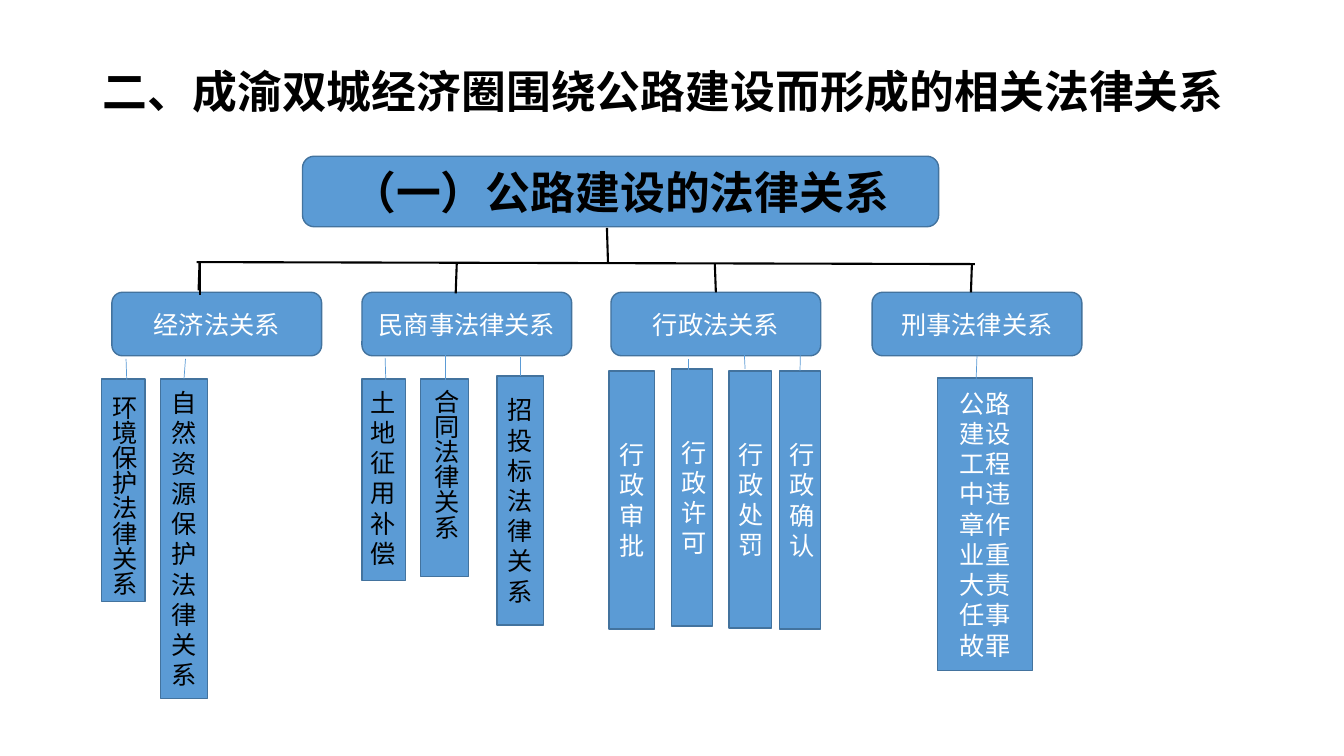
from lxml import etree
from pptx import Presentation
from pptx.dml.color import RGBColor
from pptx.enum.shapes import MSO_CONNECTOR, MSO_SHAPE
from pptx.enum.text import MSO_ANCHOR, PP_ALIGN
from pptx.oxml.ns import qn
from pptx.util import Inches, Pt

BLUE = RGBColor(0x5B, 0x9B, 0xD5)
EDGE = RGBColor(0x43, 0x73, 0x9E)
BLACK = RGBColor(0, 0, 0)
WHITE = RGBColor(0xFF, 0xFF, 0xFF)

RECT, ROUNDED = MSO_SHAPE.RECTANGLE, MSO_SHAPE.ROUNDED_RECTANGLE
STRAIGHT = MSO_CONNECTOR.STRAIGHT
LEFT, CENTER = PP_ALIGN.LEFT, PP_ALIGN.CENTER
TOP, MIDDLE = MSO_ANCHOR.TOP, MSO_ANCHOR.MIDDLE
TOP_SIDE, BOTTOM_SIDE = 0, 2

CJK = "Noto Sans CJK JP"
HEADING = {"name": CJK, "size": Pt(32), "bold": True}
LABEL = {"name": "Calibri", "size": Pt(18)}
OVERLAY = {"name": "Arial", "size": Pt(18)}

CATEGORY_TOP, CATEGORY_W, CATEGORY_H = 2.9, 2.08, 0.63

# Category: left edge, drops (from, to) measured from its top left corner; None joins its top.
# Leaf: box measured from the category's bottom left corner, text colour,
# overlay (box from the leaf's corner, vertical or not) and stub (from, to; None joins its top).
CATEGORIES = [
    {"text": "经济法关系", "left": 1.11,
     "drops": [((0.87, -0.31), (0.87, 0.03)), ((0.87, -0.31), (0.86, -0.02))],
     "leaves": [
         {"text": "环境保护法律关系", "box": (-0.1, 0.23, 0.43, 2.21), "color": BLACK,
          "overlay": ((-0.08, 0.06, 0.5, 2.3), True), "stub": ((0.24, -0.2), (0.25, 0.09))},
         {"text": "自然资源保护法律关系", "box": (0.48, 0.23, 0.47, 3.17), "color": BLACK,
          "stub": ((0.25, -0.2), None)},
     ]},
    {"text": "民商事法律关系", "left": 3.59,
     "drops": [((0.94, -0.28), (0.93, 0.01))],
     "leaves": [
         {"text": "土地征用补偿", "box": (0, 0.23, 0.43, 2), "color": BLACK,
          "overlay": ((-0.01, 0.03, 0.55, 2.08), False), "stub": ((0.23, -0.21), (0.24, 0.13))},
         {"text": "合同法律关系", "box": (0.58, 0.23, 0.48, 1.96), "color": BLACK,
          "overlay": ((-0.04, 0, 0.5, 1.97), True), "stub": ((0.25, -0.24), (0.25, 0.03))},
         {"text": "招投标法律关系", "box": (1.34, 0.2, 0.46, 2.47), "color": BLACK,
          "stub": ((0.23, -0.19), None)},
     ]},
    {"text": "行政法关系", "left": 6.06,
     "drops": [((1.03, -0.28), None)],
     "leaves": [
         {"text": "行政审批", "box": (-0.02, 0.15, 0.45, 2.56), "color": WHITE},
         {"text": "行政许可", "box": (0.6, 0.13, 0.41, 2.55), "color": WHITE,
          "stub": ((0.17, -0.1), (0.17, 0.06))},
         {"text": "行政处罚", "box": (1.17, 0.15, 0.42, 2.55), "color": WHITE,
          "stub": ((0.15, -0.22), (0.16, -0.02))},
         {"text": "行政确认", "box": (1.67, 0.15, 0.41, 2.56), "color": WHITE,
          "stub": ((0.21, -0.24), None)},
     ]},
    {"text": "刑事法律关系", "left": 8.65,
     "drops": [((0.99, -0.29), (0.98, 0))],
     "leaves": [
         {"text": "公路建设工程中违章作业重大责任事故罪", "box": (0.65, 0.22, 0.94, 2.9),
          "color": WHITE, "stub": ((0.39, -0.22), (0.38, 0.06)), "from_category": True},
     ]},
]


def write(frame, text, style, color, align=CENTER, anchor=MIDDLE):
    frame.word_wrap = True
    frame.vertical_anchor = anchor
    paragraph = frame.paragraphs[0]
    paragraph.alignment = align
    run = paragraph.add_run()
    run.text = text
    for key, value in style.items():
        setattr(run.font, key, value)
    run.font.color.rgb = color
    if style["name"] == CJK:
        etree.SubElement(run.font._element, qn("a:ea")).set("typeface", CJK)


def add_block(slide, kind, box):
    block = slide.shapes.add_shape(kind, *map(Inches, box))
    block.shadow.inherit = False
    block.fill.solid()
    block.fill.fore_color.rgb = BLUE
    block.line.color.rgb = EDGE
    block.line.width = Pt(1)
    return block


def add_line(slide, start, end, color, width):
    line = slide.shapes.add_connector(STRAIGHT, *map(Inches, (*start, *end)))
    line.line.color.rgb = color
    line.line.width = Pt(width)
    etree.SubElement(line._element.spPr, qn("a:effectLst"))
    return line


def link(slide, corner, ends, target, color, width):
    """Draw a line between offsets from a corner; a missing end joins the target's top."""
    x, y = corner
    start, end = ends
    dx, dy = end or start
    line = add_line(slide, (x + start[0], y + start[1]), (x + dx, y + dy), color, width)
    if end is None:
        line.end_connect(target, TOP_SIDE)
    return line


def add_title(slide, box):
    title = slide.shapes.title
    title.left, title.top, title.width, title.height = map(Inches, box)
    write(title.text_frame, "二、成渝双城经济圈围绕公路建设而形成的相关法律关系", HEADING, BLACK, LEFT)
    title.text_frame.paragraphs[0].line_spacing = 0.9


def add_root(slide, box):
    left, top, _, height = box
    root = add_block(slide, ROUNDED, box)
    write(root.text_frame, "（一）公路建设的法律关系", HEADING, BLACK)
    # Trunk and crossbar
    bottom = top + height
    add_line(slide, (left + 3.02, bottom + 0.01), (left + 3.03, bottom + 0.35), BLACK, 1.5)
    add_line(slide, (left - 1.05, bottom + 0.35), (left + 6.67, bottom + 0.37), BLACK, 1.5)


def add_leaf(slide, leaf, box, category_block):
    left, top = box[:2]
    block = add_block(slide, RECT, box)
    if "overlay" in leaf:
        (dx, dy, width, height), vertical = leaf["overlay"]
        overlay = slide.shapes.add_textbox(
            *map(Inches, (left + dx, top + dy, width, height)))
        write(overlay.text_frame, leaf["text"], OVERLAY, leaf["color"], LEFT, TOP)
        if vertical:
            overlay.text_frame._txBody.bodyPr.set("vert", "eaVert")
    else:
        write(block.text_frame, leaf["text"], LABEL, leaf["color"])
    if "stub" in leaf:
        stub = link(slide, (left, top), leaf["stub"], block, BLUE, 0.5)
        if leaf.get("from_category"):
            stub.begin_connect(category_block, BOTTOM_SIDE)


def add_category(slide, category, box):
    left, top, _, height = box
    block = add_block(slide, ROUNDED, box)
    write(block.text_frame, category["text"], LABEL, WHITE)
    for drop in category["drops"]:
        link(slide, (left, top), drop, block, BLACK, 1.5)
    for leaf in category["leaves"]:
        dx, dy, leaf_w, leaf_h = leaf["box"]
        add_leaf(slide, leaf, (left + dx, top + height + dy, leaf_w, leaf_h), block)


def main():
    deck = Presentation()
    deck.slide_width, deck.slide_height = Inches(13.33), Inches(7.5)
    slide = deck.slides.add_slide(deck.slide_layouts[5])
    add_title(slide, (0.92, 0.4, 11.5, 1.06))
    add_root(slide, (3, 1.55, 6.31, 0.7))
    for category in CATEGORIES:
        add_category(slide, category,
                     (category["left"], CATEGORY_TOP, CATEGORY_W, CATEGORY_H))
    deck.save("out.pptx")


if __name__ == "__main__":
    main()
